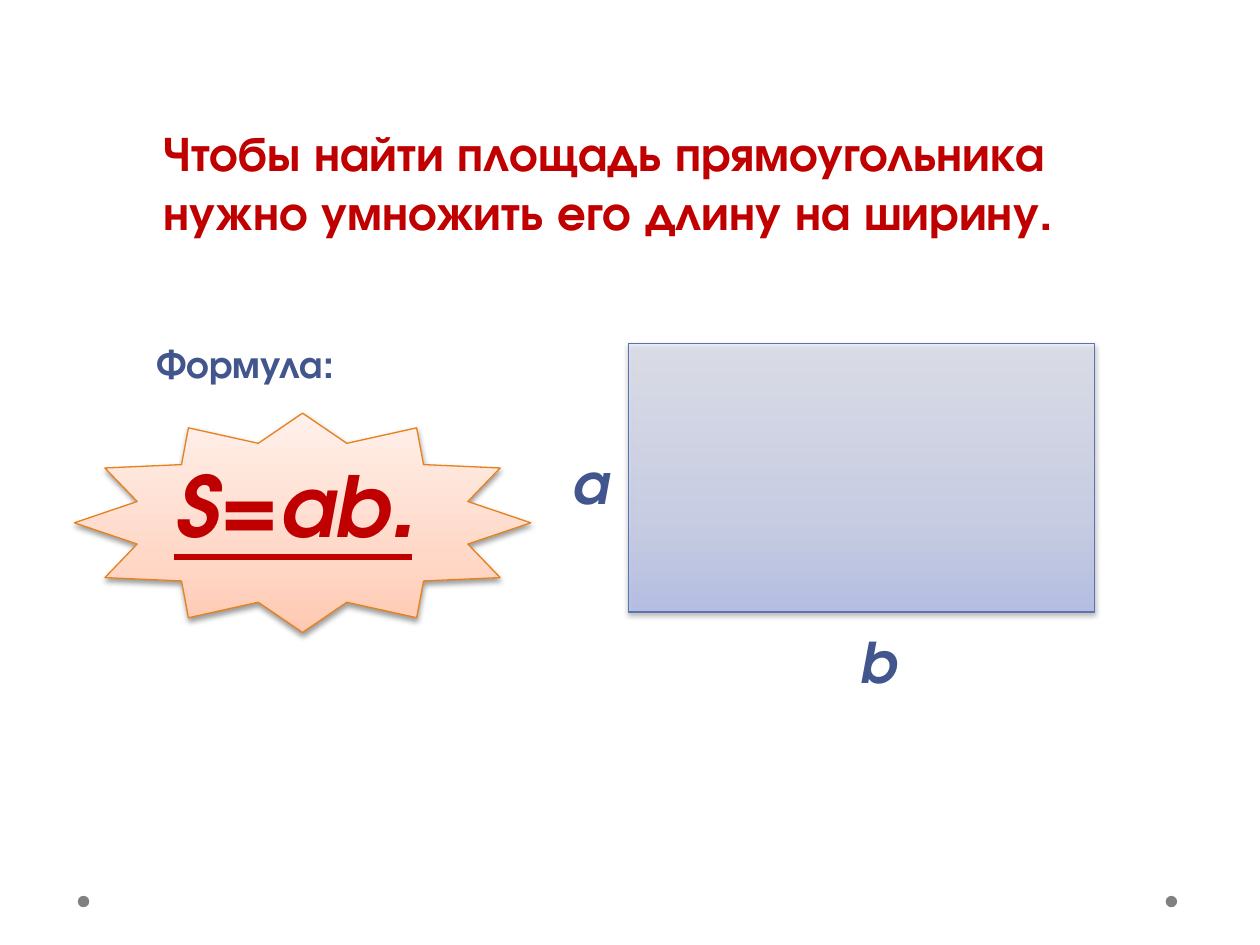
from lxml.etree import SubElement
from pptx import Presentation
from pptx.dml.color import RGBColor
from pptx.enum.shapes import MSO_CONNECTOR as Link, MSO_SHAPE as Kind
from pptx.enum.text import MSO_ANCHOR as Anchor, MSO_AUTO_SIZE as Fit, PP_ALIGN as Align
from pptx.oxml.ns import qn
from pptx.util import Cm, Pt

FONT = "TeX Gyre Adventor"
RED = RGBColor(0xC0, 0x00, 0x00)
BLUE = RGBColor(0x42, 0x56, 0x8D)
EDGE = RGBColor(0x5C, 0x72, 0xB2)
ORANGE = RGBColor(0xE6, 0x81, 0x1C)
GREY = RGBColor(0x80, 0x80, 0x80)

# Boxes are left, top, width, height in cm
RULE = "Чтобы найти площадь прямоугольника нужно умножить его длину на ширину."
RULE_BOX = (3.05, 2.34, 20, 3.2)
DOTS = [(1.57, 18.06, 0.23, 0.23), (23.5, 18.06, 0.23, 0.23)]
# Gradient stops: position %, colour, opacity %
STAR = (Kind.STAR_12_POINT, (1.5, 8.33, 9.2, 4.42), ORANGE,
        [(0, "FFC9B1", 100), (35, "FFD8C8", 100), (100, "FFF0EA", 100)])
AREA = (Kind.RECTANGLE, (12.67, 6.93, 9.4, 5.41), EDGE,
        [(0, "ADBBF6", 63), (34, "C5CFF8", 54), (100, "E8ECFD", 54)])
# Runs are text and size
LABELS = [
    ((3.3, 8.81, 6.8, 3.4), [("S=ab", 48), (".", 54)], RED, True),
    ((11.3, 8.92, 3.2, 1.4), [("a", 32)], BLUE, True),
    ((17.09, 12.52, 3.2, 1.4), [("b", 32)], BLUE, True),
    ((2.9, 6.73, 4.4, 1.4), [("Формула:", 22.2)], BLUE, False),
]
UNDER = (3.5, 11.23, 8.3, 11.23)


def cms(box):
    return [Cm(v) for v in box]


def style(obj, **form):
    for name, value in form.items():
        setattr(obj, name, value)


def write(shape, runs, color, italic=False):
    frame = shape.text_frame
    style(frame, word_wrap=True, auto_size=Fit.NONE, vertical_anchor=Anchor.TOP)
    para = frame.paragraphs[0]
    style(para, alignment=Align.LEFT, space_before=Pt(0))
    for text, size in runs:
        run = para.add_run()
        run.text = text
        style(run.font, name=FONT, size=Pt(size), bold=True, italic=italic)
        run.font.color.rgb = color


def tint(parent, color, alpha):
    node = SubElement(parent, qn("a:srgbClr"), val=color)
    SubElement(node, qn("a:alpha"), val=str(alpha * 1000))


def figure(shapes, kind, box, edge, stops):
    """Add a shape with a bottom-to-top gradient, thin edge and soft shadow."""
    shape = shapes.add_shape(kind, *cms(box))
    shape.fill.gradient()
    shape.fill.gradient_angle = 90
    props = shape._element.spPr
    ramp = props.find(".//" + qn("a:gsLst"))
    for old in list(ramp):
        ramp.remove(old)
    for pos, color, alpha in stops:
        tint(SubElement(ramp, qn("a:gs"), pos=str(pos * 1000)), color, alpha)
    shape.line.color.rgb = edge
    shape.line.width = Pt(0.75)
    shape.shadow.inherit = False
    shade = SubElement(props.find(qn("a:effectLst")), qn("a:outerShdw"),
                       blurRad=str(Pt(3.1)), dist=str(Pt(1.6)),
                       dir="5400000", rotWithShape="0")
    tint(shade, "000000", 38)


def main():
    deck = Presentation()
    style(deck, slide_width=Cm(25.4), slide_height=Cm(19.05))
    slide = deck.slides.add_slide(deck.slide_layouts[5])
    shapes = slide.shapes

    title = shapes.title
    style(title, **dict(zip(("left", "top", "width", "height"), cms(RULE_BOX))))
    write(title, [(RULE, 28)], RED)

    for box in DOTS:
        dot = shapes.add_shape(Kind.OVAL, *cms(box))
        dot.shadow.inherit = False
        dot.fill.solid()
        dot.fill.fore_color.rgb = GREY
        dot.line.fill.background()

    for item in (STAR, AREA):
        figure(shapes, *item)
    for box, runs, color, italic in LABELS:
        write(shapes.add_textbox(*cms(box)), runs, color, italic)

    under = shapes.add_connector(Link.STRAIGHT, *cms(UNDER))
    under.line.color.rgb = RED
    under.line.width = Pt(3)
    SubElement(under._element.spPr, qn("a:effectLst"))

    deck.save("out.pptx")


if __name__ == "__main__":
    main()
